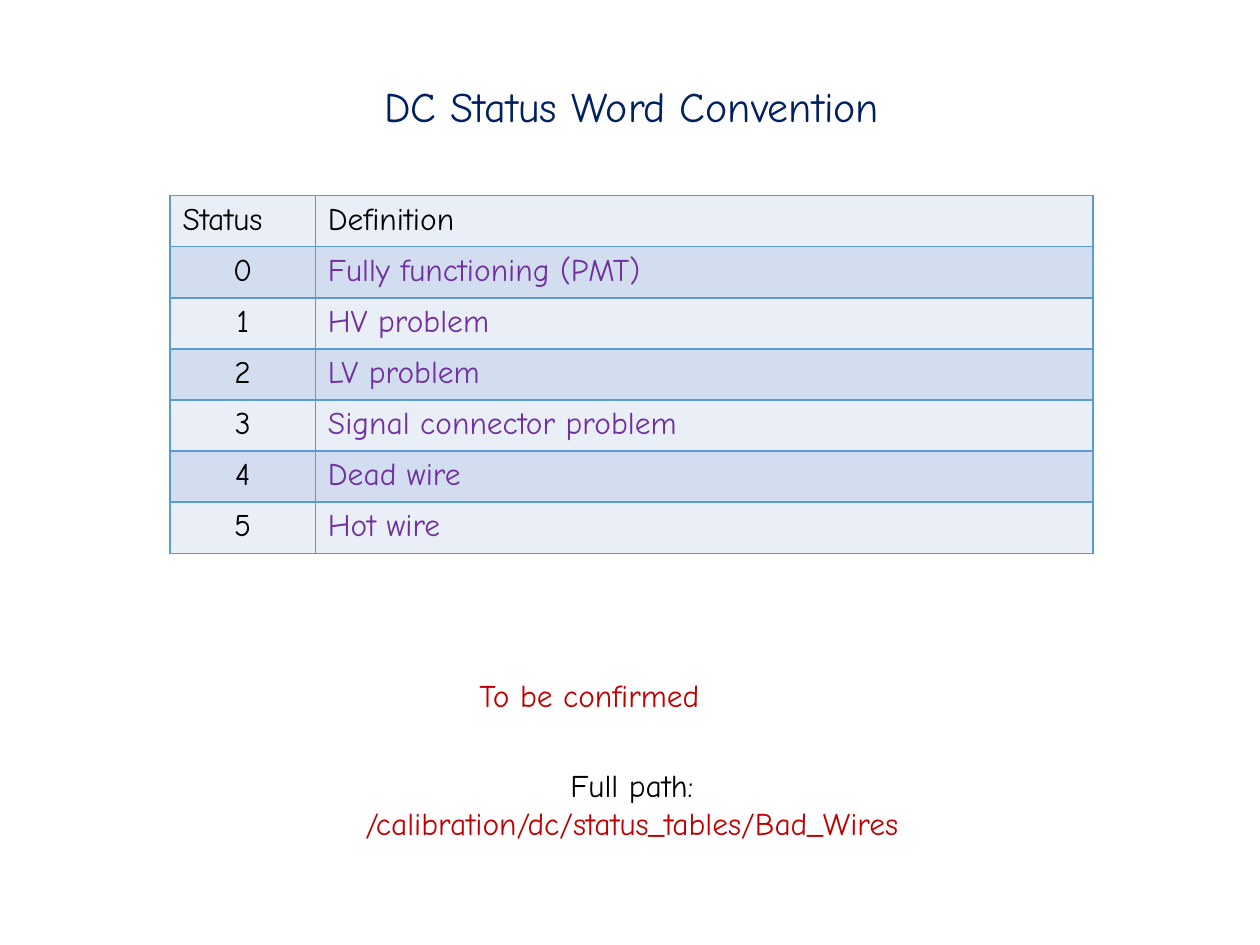
"""Build the DC status word convention slide."""
from lxml.etree import SubElement
from pptx import Presentation
from pptx.dml.color import RGBColor
from pptx.enum.text import MSO_ANCHOR, MSO_AUTO_SIZE, PP_ALIGN
from pptx.oxml.ns import qn
from pptx.util import Pt

BLACK, RED, PURPLE, NAVY = "000000", "C00000", "7030A0", "002060"
BORDER, BANDS = "5B9BD5", ("EAEFF7", "D2DEEF")


def colour(value):
    return RGBColor.from_string(value)


def write(frame, spans, size=18, align=PP_ALIGN.CENTER):
    para = frame.paragraphs[0]
    para.alignment = align
    for text, ink in spans:
        span = para.add_run()
        span.text = text
        for name, value in {"name": "Comic Neue", "size": Pt(size), "bold": False}.items():
            setattr(span.font, name, value)
        span.font.color.rgb = colour(ink)


deck = Presentation()
deck.slide_width, deck.slide_height = Pt(720), Pt(540)
page = deck.slides.add_slide(deck.slide_layouts[5])

title = page.shapes.title
for name, value in {"left": 113, "top": 42.5, "width": 496, "height": 36}.items():
    setattr(title, name, Pt(value))
title.text_frame.vertical_anchor = MSO_ANCHOR.TOP
title.text_frame.auto_size = MSO_AUTO_SIZE.NONE
write(title.text_frame, [("DC Status Word Convention", NAVY)], size=24)

definitions = ["Fully functioning (PMT)", "HV problem", "LV problem",
               "Signal connector problem", "Dead wire", "Hot wire"]
rows = [("Status", "Definition")] + [(str(code), text) for code, text in enumerate(definitions)]
widths, row_height = (83, 444.5), 29.2
table = page.shapes.add_table(len(rows), len(widths), Pt(97.2), Pt(111.8),
                              Pt(sum(widths)), Pt(row_height * len(rows))).table
table.first_row = table.horz_banding = False
for column, width in zip(table.columns, widths):
    column.width = Pt(width)
for r, row in enumerate(rows):
    table.rows[r].height = Pt(row_height)
    for c, text in enumerate(row):
        cell = table.cell(r, c)
        properties = cell._tc.get_or_add_tcPr()
        for side in ("a:lnL", "a:lnR", "a:lnT", "a:lnB"):
            line = SubElement(properties, qn(side), w=str(Pt(1)))
            SubElement(SubElement(line, qn("a:solidFill")), qn("a:srgbClr"), val=BORDER)
        cell.fill.solid()
        cell.fill.fore_color.rgb = colour(BANDS[r % 2])
        write(cell.text_frame, [(text, PURPLE if r and c else BLACK)],
              align=PP_ALIGN.LEFT if r == 0 or c else PP_ALIGN.CENTER)

notes = [
    ((200, 383, 273.6, 29), [("To be confirmed", RED)]),
    ((166.3, 434.2, 389.5, 51),
     [("Full path: ", BLACK), ("/calibration/dc/status_tables/Bad_Wires", RED)]),
]
for place, spans in notes:
    box = page.shapes.add_textbox(*map(Pt, place))
    box.text_frame.word_wrap = True
    box.text_frame.auto_size = MSO_AUTO_SIZE.SHAPE_TO_FIT_TEXT
    write(box.text_frame, spans)

deck.save("out.pptx")
